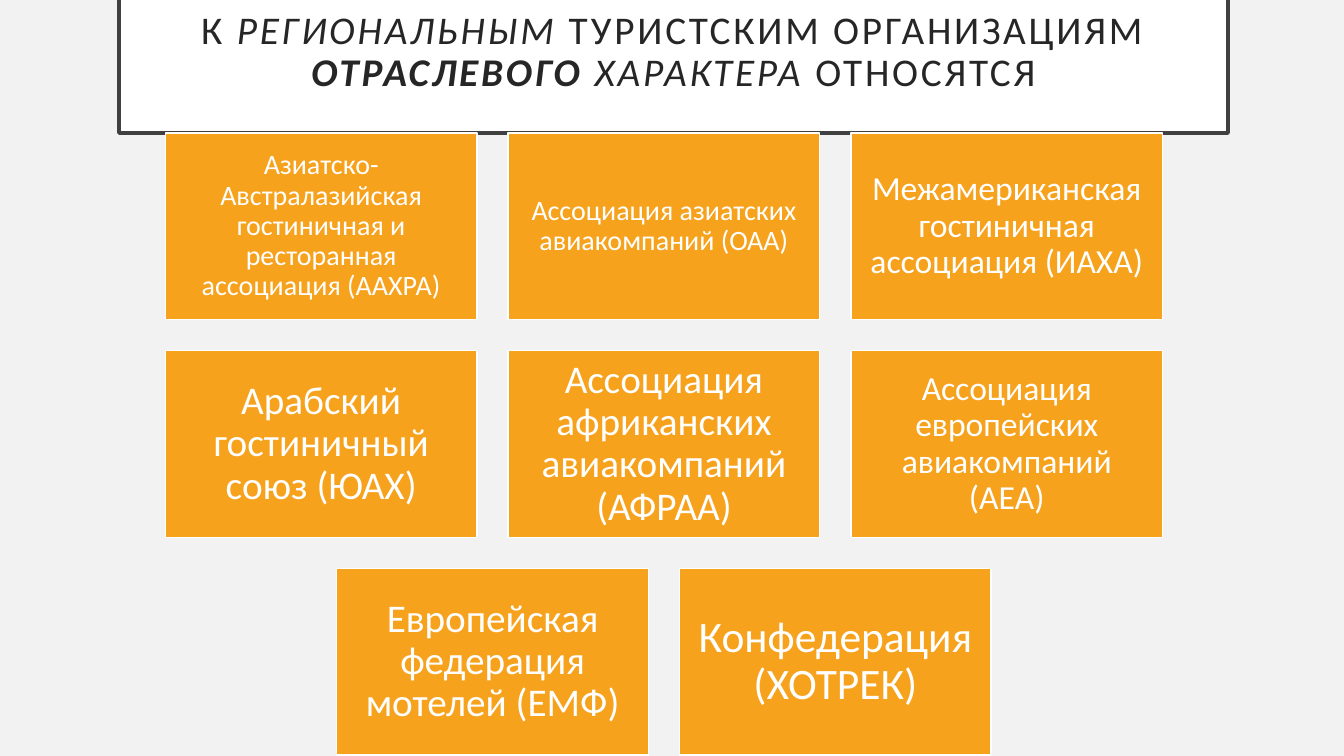
from pptx import Presentation
from pptx.dml.color import RGBColor
from pptx.enum.shapes import MSO_SHAPE
from pptx.enum.text import MSO_ANCHOR, PP_ALIGN
from pptx.util import Inches, Pt

RECTANGLE = MSO_SHAPE.RECTANGLE
MIDDLE = MSO_ANCHOR.MIDDLE
CENTER = PP_ALIGN.CENTER

PAPER = RGBColor(0xF2, 0xF2, 0xF2)
WHITE = RGBColor(0xFF, 0xFF, 0xFF)
ORANGE = RGBColor(0xF6, 0xA2, 0x1D)
INK = RGBColor(0x26, 0x26, 0x26)
FRAME = RGBColor(0x40, 0x40, 0x40)

COLUMNS = 3
GRID_LEFT, GRID_TOP = 1.64, 1.32
COLUMN_STEP, ROW_STEP = 3.4, 2.16
CARD_WIDTH, CARD_HEIGHT = 3.09, 1.85

HEADING = [
    ("К ", False, False),
    ("РЕГИОНАЛЬНЫМ ", False, True),
    ("ТУРИСТСКИМ ОРГАНИЗАЦИЯМ ", False, False),
    ("ОТРАСЛЕВОГО", True, True),
    (" ХАРАКТЕРА ", False, True),
    ("ОТНОСЯТСЯ", False, False),
]

ORGANIZATIONS = [
    [("Азиатско-Австралазийская гостиничная и ресторанная ассоциация (ААХРА)", 20),
     ("Ассоциация азиатских авиакомпаний (ОАА)", 20),
     ("Межамериканская гостиничная ассоциация (ИАХА)", 24)],
    [("Арабский гостиничный союз (ЮАХ)", 28),
     ("Ассоциация африканских авиакомпаний (АФРАА)", 28),
     ("Ассоциация европейских авиакомпаний (АЕА)", 24)],
    [("Европейская федерация мотелей (ЕМФ)", 28),
     ("Конфедерация (ХОТРЕК)", 31)],
]


class SlideBuilder:
    """Holds the style and the slide being filled."""

    font_name = "Calibri"
    line_spacing = 0.9

    def __init__(self, slide):
        self.slide = slide
        slide.background.fill.solid()
        slide.background.fill.fore_color.rgb = PAPER

    def box(self, place, fill, line, line_width, inset, size, color):
        shape = self.slide.shapes.add_shape(RECTANGLE, *map(Inches, place))
        shape.shadow.inherit = False
        shape.fill.solid()
        shape.fill.fore_color.rgb = fill
        shape.line.color.rgb = line
        shape.line.width = Pt(line_width)

        frame = shape.text_frame
        frame.word_wrap = True
        frame.vertical_anchor = MIDDLE
        frame.margin_left = frame.margin_right = Inches(inset)
        frame.margin_top = frame.margin_bottom = Inches(inset)

        paragraph = frame.paragraphs[0]
        paragraph.alignment = CENTER
        paragraph.line_spacing = self.line_spacing
        paragraph.font.name = self.font_name
        paragraph.font.size = Pt(size)
        paragraph.font.color.rgb = color
        return paragraph

    def heading(self, pieces):
        paragraph = self.box((1.18, -0.27, 11, 1.59), WHITE, FRAME, 2.5, 0.2, 28, INK)
        for words, bold, italic in pieces:
            run = paragraph.add_run()
            run.text = words
            run.font.bold = bold
            run.font.italic = italic
            run.font._element.set("spc", "200")

    def card(self, column, row, name, size):
        place = (GRID_LEFT + column * COLUMN_STEP, GRID_TOP + row * ROW_STEP,
                 CARD_WIDTH, CARD_HEIGHT)
        paragraph = self.box(place, ORANGE, WHITE, 1, size / 240, size, WHITE)
        paragraph.add_run().text = name

    def card_grid(self, rows):
        for row, cards in enumerate(rows):
            indent = (COLUMNS - len(cards)) / 2
            for column, (name, size) in enumerate(cards):
                self.card(indent + column, row, name, size)


def main():
    deck = Presentation()
    deck.slide_width = Inches(13.33)
    deck.slide_height = Inches(7.5)
    builder = SlideBuilder(deck.slides.add_slide(deck.slide_layouts[6]))
    builder.heading(HEADING)
    builder.card_grid(ORGANIZATIONS)
    deck.save("out.pptx")


if __name__ == "__main__":
    main()
